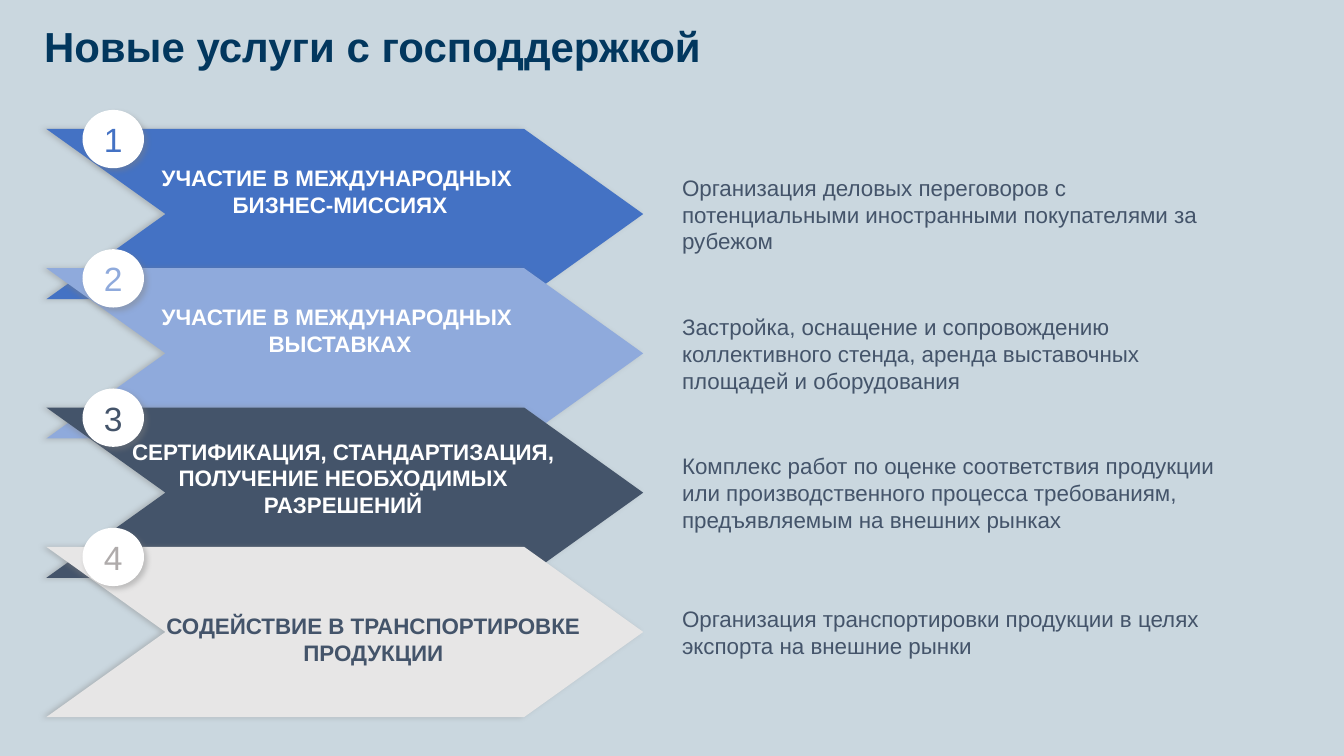
import pptx
import pptx.dml.color
import pptx.enum.shapes
import pptx.enum.text
import pptx.oxml
import pptx.oxml.ns
import pptx.util
from pptx.util import Cm

TITLE = "Новые услуги с господдержкой"

# Lengths in cm; label_shift is the offset of the label from the arrow's middle
SERVICES = [
    dict(label=["УЧАСТИЕ В МЕЖДУНАРОДНЫХ ", "БИЗНЕС-МИССИЯХ"],
         detail="Организация деловых переговоров с потенциальными "
                "иностранными покупателями за рубежом",
         fill="4472C4", digit="4472C4", ink="FFFFFF", label_left=2.59,
         label_shift=-0.58, label_height=1.55, detail_height=1.57, gap=0),
    dict(label=["УЧАСТИЕ В МЕЖДУНАРОДНЫХ ", "ВЫСТАВКАХ"],
         detail="Застройка, оснащение и сопровождению коллективного стенда, "
                "аренда выставочных площадей и оборудования",
         fill="8FAADC", digit="8FAADC", ink="FFFFFF", label_left=2.59,
         label_shift=-0.58, label_height=1.55, detail_height=2.16, gap=0),
    dict(label=["СЕРТИФИКАЦИЯ, СТАНДАРТИЗАЦИЯ, ПОЛУЧЕНИЕ НЕОБХОДИМЫХ РАЗРЕШЕНИЙ"],
         detail="Комплекс работ по оценке соответствия продукции или "
                "производственного процесса требованиям, предъявляемым на "
                "внешних рынках",
         fill="44546A", digit="44546A", ink="FFFFFF", label_left=2.67,
         label_shift=-0.37, label_height=2.06, detail_height=2.16, gap=3),
    dict(label=["СОДЕЙСТВИЕ В ТРАНСПОРТИРОВКЕ ПРОДУКЦИИ"],
         detail="Организация транспортировки продукции в целях экспорта "
                "на внешние рынки",
         fill="E7E6E6", digit="AFABAB", ink="44546A", label_left=3.43,
         label_shift=0.17, label_height=1.55, detail_height=2.16, gap=2),
]

ARROW_LEFT, ARROW_TOP, ARROW_WIDTH, ARROW_HEIGHT = 1.17, 3.25, 15.04, 4.29
ARROW_POINT, ARROW_PITCH = 3.0, 3.51
LABEL_WIDTH = 11.96
DETAIL_LEFT, DETAIL_WIDTH, DETAIL_COLOR = 16.94, 14.35, "44546A"
BADGE_LEFT, BADGE_RISE, BADGE_WIDTH, BADGE_HEIGHT = 2.08, 0.48, 1.55, 1.47

LEFT = pptx.enum.text.PP_ALIGN.LEFT
CENTER = pptx.enum.text.PP_ALIGN.CENTER
MIDDLE = pptx.enum.text.MSO_ANCHOR.MIDDLE
TOP = pptx.enum.text.MSO_ANCHOR.TOP


def color(value):
    return pptx.dml.color.RGBColor.from_string(value)


def paint(shape, fill, shadow_angle):
    """Solid fill, no outline and a soft grey shadow."""
    shape.fill.solid()
    shape.fill.fore_color.rgb = color(fill)
    shape.line.fill.background()
    shape.shadow.inherit = False
    effects = shape._element.spPr.find(pptx.oxml.ns.qn("a:effectLst"))
    effects.append(pptx.oxml.parse_xml(
        f'<a:outerShdw {pptx.oxml.ns.nsdecls("a")} blurRad="{pptx.util.Pt(4)}" '
        f'dist="{pptx.util.Pt(3)}" dir="{shadow_angle * 60000}" '
        'algn="ctr" rotWithShape="0"><a:srgbClr val="808080">'
        '<a:alpha val="40000"/></a:srgbClr></a:outerShdw>'))


def write(shape, lines, size, ink, bold=False, align=LEFT, anchor=MIDDLE, gap=0):
    frame = shape.text_frame
    frame.word_wrap = True
    frame.vertical_anchor = anchor
    frame.text = "\n".join(lines)
    for paragraph in frame.paragraphs:
        paragraph.alignment = align
        paragraph.space_before = paragraph.space_after = pptx.util.Pt(gap)
        paragraph.font.name = "Arial"
        paragraph.font.size = pptx.util.Pt(size)
        paragraph.font.bold = bold
        paragraph.font.color.rgb = color(ink)


def add_text(left, top, width, height, lines, size, ink, **style):
    box = slide.shapes.add_textbox(Cm(left), Cm(top), Cm(width), Cm(height))
    write(box, lines, size, ink, **style)
    return box


def add_arrow(top, fill):
    right, middle = ARROW_LEFT + ARROW_WIDTH, top + ARROW_HEIGHT / 2
    shoulder, bottom = right - ARROW_POINT, top + ARROW_HEIGHT
    outline = [(shoulder, top), (right, middle), (shoulder, bottom),
               (ARROW_LEFT, bottom), (ARROW_LEFT + ARROW_POINT, middle)]
    builder = slide.shapes.build_freeform(Cm(ARROW_LEFT), Cm(top))
    builder.add_line_segments([(Cm(x), Cm(y)) for x, y in outline], close=True)
    paint(builder.convert_to_shape(), fill, 180)


presentation = pptx.Presentation()
presentation.slide_width, presentation.slide_height = Cm(33.87), Cm(19.05)
slide = presentation.slides.add_slide(presentation.slide_layouts[6])
slide.background.fill.solid()
slide.background.fill.fore_color.rgb = color("CAD7DF")

# Title
title = add_text(0.86, 0.46, 22.45, 1.47, [TITLE], 30, "02375E",
                 bold=True, anchor=TOP)
title.text_frame.paragraphs[0].line_spacing = pptx.util.Pt(34)

# Arrows, each overlapping the one above
tops = [ARROW_TOP + ARROW_PITCH * i for i in range(len(SERVICES))]
for top, service in zip(tops, SERVICES):
    add_arrow(top, service["fill"])

# Labels, descriptions and number badges
for number, (top, service) in enumerate(zip(tops, SERVICES), start=1):
    middle = top + ARROW_HEIGHT / 2
    label_top = middle + service["label_shift"] - service["label_height"] / 2
    add_text(service["label_left"], label_top, LABEL_WIDTH,
             service["label_height"], service["label"], 16, service["ink"],
             bold=True, align=CENTER)
    add_text(DETAIL_LEFT, middle - service["detail_height"] / 2, DETAIL_WIDTH,
             service["detail_height"], [service["detail"]], 16, DETAIL_COLOR,
             gap=service["gap"])
    badge = slide.shapes.add_shape(
        pptx.enum.shapes.MSO_SHAPE.OVAL, Cm(BADGE_LEFT), Cm(top - BADGE_RISE),
        Cm(BADGE_WIDTH), Cm(BADGE_HEIGHT))
    paint(badge, "FFFFFF", 45)
    write(badge, [str(number)], 24, service["digit"], align=CENTER)

presentation.save("out.pptx")
